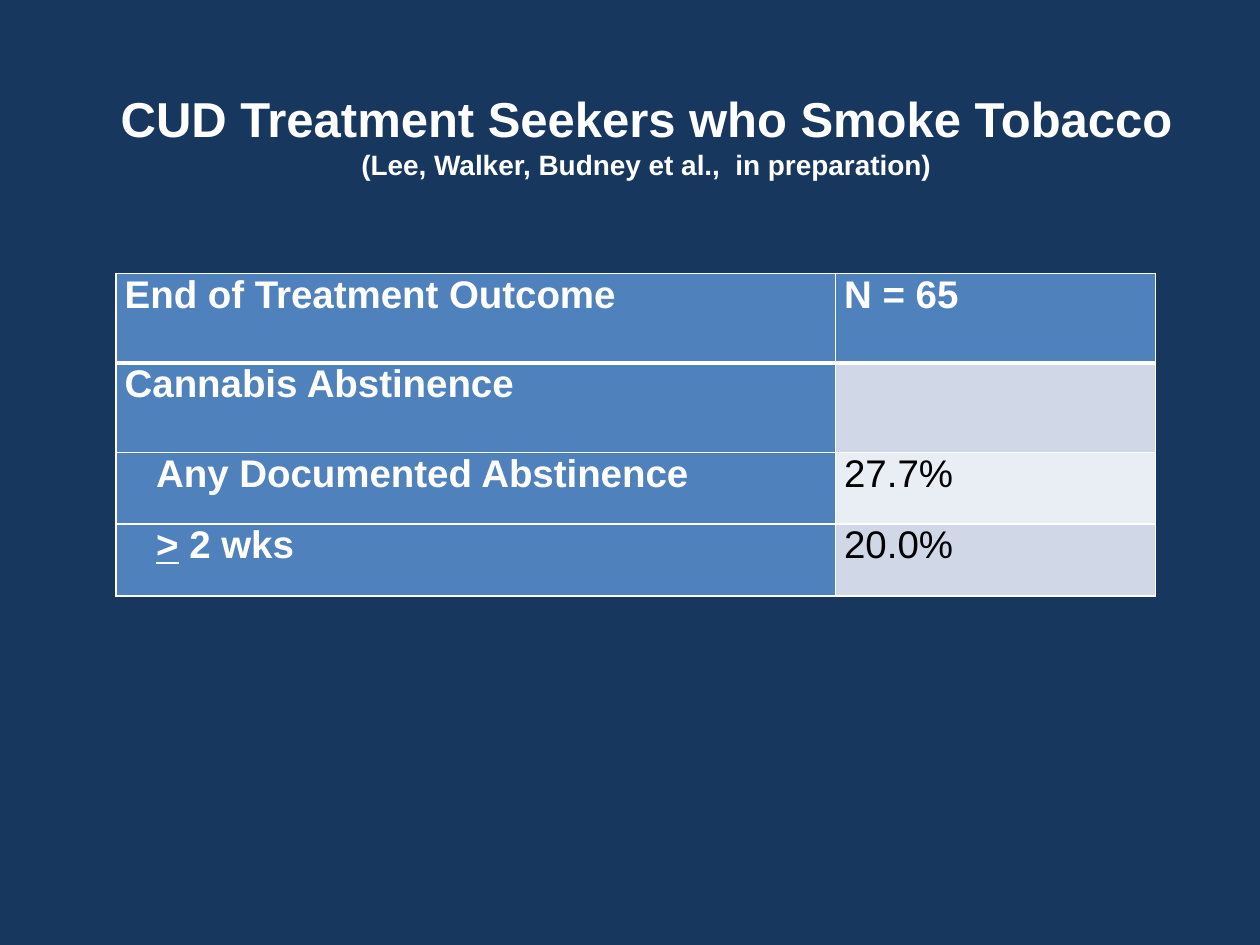
from lxml.etree import SubElement
from pptx import Presentation
from pptx.dml.color import RGBColor
from pptx.enum.text import MSO_ANCHOR, MSO_AUTO_SIZE, PP_ALIGN
from pptx.oxml.ns import qn
from pptx.util import Inches, Pt

COLORS = {
    "navy": "17375E",
    "blue": "4F81BD",
    "band": "D0D8E8",
    "light_band": "E9EDF4",
    "white": "FFFFFF",
    "black": "000000",
}
FONT = "Arial"
COLUMN_WIDTHS = [5.71, 2.54]
ROW_HEIGHTS = [0.71, 0.71, 0.57, 0.57]
CELL_MARGIN = 0.07
INDENT = 0.25
# Label, value, indent level of the label
OUTCOMES = [
    ("End of Treatment Outcome", "N = 65", 0),
    ("Cannabis Abstinence", "", 0),
    ("Any Documented Abstinence", "27.7%", 1),
    ("> 2 wks", "20.0%", 1),
]


def color(name):
    return RGBColor.from_string(COLORS[name])


def style_span(span, size, color_name="white", bold=True):
    span.font.name = FONT
    span.font.size = Pt(size)
    span.font.bold = bold
    span.font.color.rgb = color(color_name)


def add_title(page, heading, citation):
    box = page.shapes.add_textbox(Inches(0.77), Inches(0.65), Inches(8.72), Inches(0.84))
    frame = box.text_frame
    frame.word_wrap = False
    frame.auto_size = MSO_AUTO_SIZE.SHAPE_TO_FIT_TEXT
    frame.vertical_anchor = MSO_ANCHOR.MIDDLE
    para = frame.paragraphs[0]
    para.text = f"{heading}\v{citation}"
    para.alignment = PP_ALIGN.CENTER
    for span, size in zip(para.runs, (28, 16)):
        style_span(span, size)


def set_borders(cell, widths):
    """Draw white edges; widths maps left, right, top, bottom tags to points."""
    properties = cell._tc.get_or_add_tcPr()
    for position, (tag, width) in enumerate(widths.items()):
        line = properties.makeelement(qn(f"a:{tag}"), {"w": str(Pt(width))})
        fill = SubElement(line, qn("a:solidFill"))
        SubElement(fill, qn("a:srgbClr"), val=COLORS["white"])
        properties.insert(position, line)


def fill_cell(cell, text, fill, text_color, bold, level=0):
    cell.fill.solid()
    cell.fill.fore_color.rgb = color(fill)
    cell.margin_left = Inches(CELL_MARGIN + level * INDENT)
    cell.margin_right = Inches(CELL_MARGIN)
    cell.margin_top = cell.margin_bottom = 0
    cell.vertical_anchor = MSO_ANCHOR.TOP
    para = cell.text_frame.paragraphs[0]
    # The underlined ">" stands for "at least"
    parts = [">", text[1:]] if text.startswith(">") else [text] if text else []
    for part in parts:
        span = para.add_run()
        span.text = part
        style_span(span, 22, text_color, bold)
        span.font.underline = part == ">"


def add_outcome_table(page):
    frame = page.shapes.add_table(
        len(ROW_HEIGHTS), len(COLUMN_WIDTHS), Inches(0.92), Inches(2.17),
        Inches(sum(COLUMN_WIDTHS)), Inches(sum(ROW_HEIGHTS)))
    table = frame.table
    for column, width in zip(table.columns, COLUMN_WIDTHS):
        column.width = Inches(width)
    for row, height in zip(table.rows, ROW_HEIGHTS):
        row.height = Inches(height)

    for index, (label, value, level) in enumerate(OUTCOMES):
        header = index == 0
        band = "band" if index % 2 else "light_band"
        label_cell, value_cell = table.rows[index].cells
        fill_cell(label_cell, label, "blue", "white", True, level)
        fill_cell(value_cell, value, "blue" if header else band,
                  "white" if header else "black", header)
        edges = {"lnL": 1, "lnR": 1, "lnT": 3 if index == 1 else 1,
                 "lnB": 3 if header else 1}
        for cell in (label_cell, value_cell):
            set_borders(cell, edges)


def main():
    deck = Presentation()
    deck.slide_width, deck.slide_height = Inches(10), Inches(7.5)
    page = deck.slides.add_slide(deck.slide_layouts[6])
    page.background.fill.solid()
    page.background.fill.fore_color.rgb = color("navy")
    add_title(page, "CUD Treatment Seekers who Smoke Tobacco",
              "(Lee, Walker, Budney et al.,  in preparation)")
    add_outcome_table(page)
    deck.save("out.pptx")


if __name__ == "__main__":
    main()
